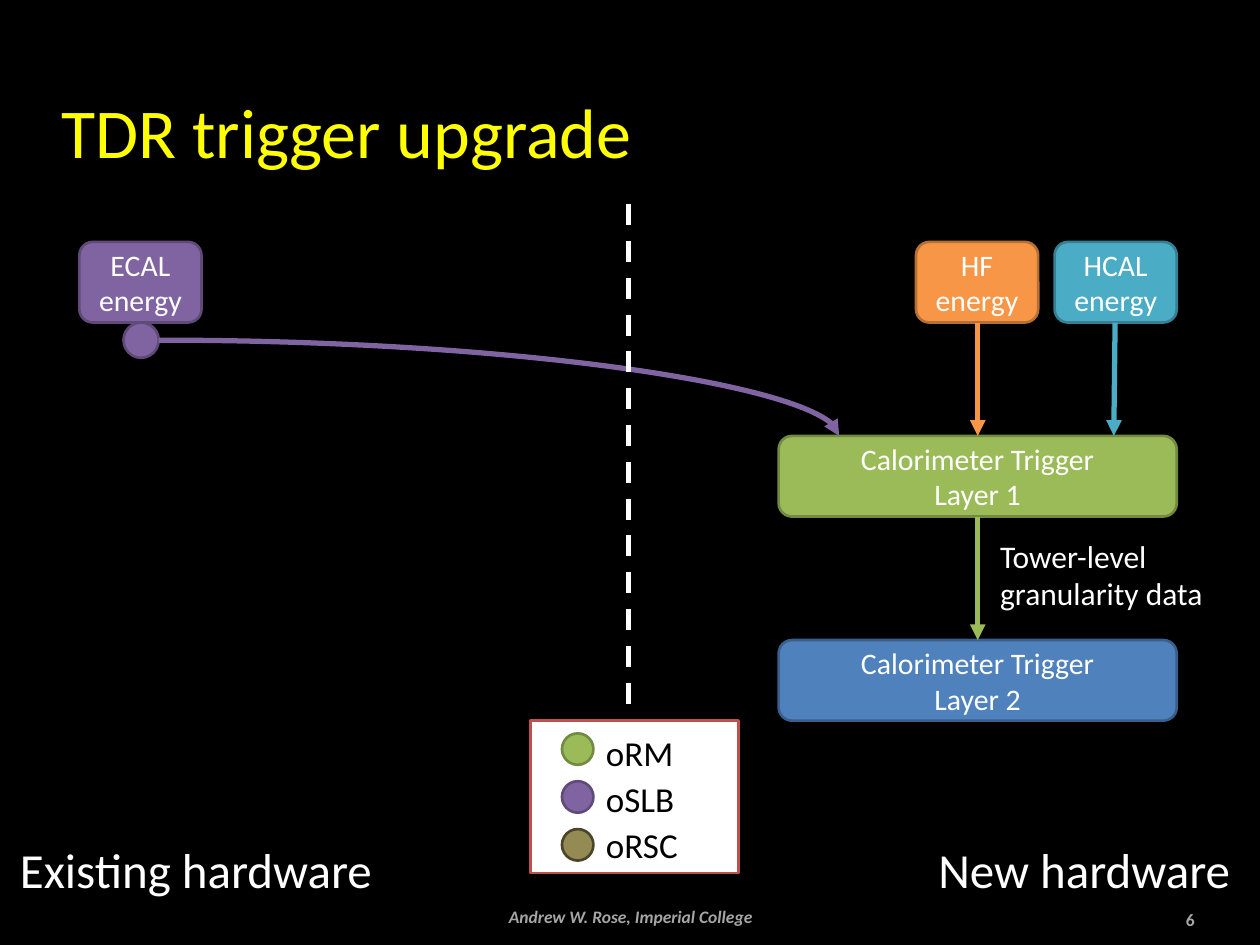
from lxml import etree
from pptx import Presentation
from pptx.dml.color import RGBColor
from pptx.enum.dml import MSO_LINE
from pptx.enum.shapes import MSO_CONNECTOR, MSO_SHAPE
from pptx.enum.text import MSO_ANCHOR, PP_ALIGN
from pptx.oxml.ns import qn
from pptx.util import Inches, Pt

LEFT, CENTER, RIGHT = PP_ALIGN.LEFT, PP_ALIGN.CENTER, PP_ALIGN.RIGHT
TOP, MIDDLE, BOTTOM = MSO_ANCHOR.TOP, MSO_ANCHOR.MIDDLE, MSO_ANCHOR.BOTTOM
ROUNDED, OVAL, RECTANGLE = MSO_SHAPE.ROUNDED_RECTANGLE, MSO_SHAPE.OVAL, MSO_SHAPE.RECTANGLE
STRAIGHT, CURVE = MSO_CONNECTOR.STRAIGHT, MSO_CONNECTOR.CURVE
DASH = MSO_LINE.DASH

COLORS = {
    "black": "000000", "white": "FFFFFF", "yellow": "FFFF00", "grey": "A6A6A6",
    "purple": "8064A2", "purple edge": "5F4A78",
    "orange": "F79646", "orange edge": "B76F34",
    "green": "9BBB59", "green edge": "738A42",
    "blue": "4F81BD", "blue edge": "3A5F8C",
    "teal": "4BACC6", "teal edge": "377F92",
    "olive": "948A54", "olive edge": "4A452A",
    "red": "C0504D",
}

BOX_HEIGHT, ENERGY_WIDTH, LAYER_WIDTH = 0.64, 0.97, 3.16
ENERGY_TOP, LAYER_1_TOP, LAYER_2_TOP = 1.92, 3.46, 5.08
ENERGY_BOTTOM = ENERGY_TOP + BOX_HEIGHT
LAYER_LEFT = 6.18
LAYER_CENTER = LAYER_LEFT + LAYER_WIDTH / 2
PORT_SIZE = 0.28

BOXES = [
    (["ECAL", "energy"], 0.63, ENERGY_TOP, ENERGY_WIDTH, "purple"),
    (["HF", "energy"], 7.27, ENERGY_TOP, ENERGY_WIDTH, "orange"),
    (["HCAL", "energy"], 8.37, ENERGY_TOP, ENERGY_WIDTH, "teal"),
    (["Calorimeter Trigger", "Layer 1"], LAYER_LEFT, LAYER_1_TOP, LAYER_WIDTH, "green"),
    (["Calorimeter Trigger", "Layer 2"], LAYER_LEFT, LAYER_2_TOP, LAYER_WIDTH, "blue"),
]
ARROWS = [
    ((LAYER_CENTER, ENERGY_BOTTOM), (LAYER_CENTER, LAYER_1_TOP), "orange"),
    ((LAYER_CENTER, LAYER_1_TOP + BOX_HEIGHT), (LAYER_CENTER, LAYER_2_TOP), "green"),
    ((8.85, ENERGY_BOTTOM), (8.84, LAYER_1_TOP), "teal"),
]
LEGEND = [("oRM", "green"), ("oSLB", "purple"), ("oRSC", "olive")]
LABELS = [
    ("TDR trigger upgrade", (0.39, 0.25, 8.4, 1.17),
     {"size": 40, "color": "yellow", "anchor": BOTTOM}),
    ("Existing hardware", (0.06, 6.61, 3.25, 0.57), {"size": 28}),
    ("New hardware", (6.61, 6.61, 3.25, 0.57), {"size": 28, "align": RIGHT}),
    ("Tower-level granularity data", (7.84, 4.21, 2.1, 0.71), {"size": 18}),
    ("Andrew W. Rose, Imperial College", (2.77, 7.14, 4.47, 0.27),
     {"size": 10, "color": "grey", "align": CENTER, "anchor": MIDDLE, "bold": True, "italic": True}),
    ("6", (8.62, 7.16, 0.96, 0.27),
     {"size": 10, "color": "grey", "align": RIGHT, "anchor": MIDDLE, "bold": True}),
]


def rgb(name):
    return RGBColor.from_string(COLORS[name])


def write_text(shape, lines, size=17, color="white", align=LEFT, anchor=TOP,
               bold=False, italic=False, spacing=None, indent=0):
    frame = shape.text_frame
    frame.word_wrap = True
    frame.vertical_anchor = anchor
    for index, line in enumerate(lines):
        paragraph = frame.add_paragraph() if index else frame.paragraphs[0]
        paragraph.alignment = align
        paragraph.line_spacing = spacing
        if indent:
            paragraph._p.get_or_add_pPr().set("marL", str(Inches(indent)))
        run = paragraph.add_run()
        run.text = line
        run.font.name = "Calibri"
        run.font.size = Pt(size)
        run.font.bold = bold
        run.font.italic = italic
        run.font.color.rgb = rgb(color)


def add_shape(slide, kind, left, top, width, height, fill, edge):
    shape = slide.shapes.add_shape(kind, Inches(left), Inches(top), Inches(width), Inches(height))
    shape.shadow.inherit = False
    shape.fill.solid()
    shape.fill.fore_color.rgb = rgb(fill)
    shape.line.color.rgb = rgb(edge)
    shape.line.width = Pt(1.5)
    return shape


def add_line(slide, start, end, color, kind=STRAIGHT, arrow=True, dash=None):
    line = slide.shapes.add_connector(kind, *[Inches(value) for value in (*start, *end)])
    line.line.color.rgb = rgb(color)
    line.line.width = Pt(3)
    if dash:
        line.line.dash_style = dash
    properties = line._element.spPr
    if arrow:
        etree.SubElement(properties.find(qn("a:ln")), qn("a:tailEnd"), type="triangle")
    if kind == CURVE:
        properties.find(qn("a:prstGeom")).set("prst", "curvedConnector2")
    etree.SubElement(properties, qn("a:effectLst"))


def add_legend(slide):
    panel = add_shape(slide, RECTANGLE, 4.21, 5.72, 1.65, 1.21, "white", "red")
    write_text(panel, [name for name, _ in LEGEND], size=20, color="black",
               spacing=1.1, indent=0.5)
    for row, (_, color) in enumerate(LEGEND):
        add_shape(slide, OVAL, 4.46, 5.82 + row * 0.38, 0.25, 0.25, color, f"{color} edge")


def main():
    presentation = Presentation()
    presentation.slide_width, presentation.slide_height = Inches(10), Inches(7.5)
    slide = presentation.slides.add_slide(presentation.slide_layouts[6])
    slide.background.fill.solid()
    slide.background.fill.fore_color.rgb = rgb("black")

    for lines, left, top, width, color in BOXES:
        box = add_shape(slide, ROUNDED, left, top, width, BOX_HEIGHT, color, f"{color} edge")
        write_text(box, lines, align=CENTER, anchor=MIDDLE)
    add_shape(slide, OVAL, 0.98, ENERGY_BOTTOM, PORT_SIZE, PORT_SIZE, "purple", "purple edge")

    for start, end, color in ARROWS:
        add_line(slide, start, end, color)
    port_exit = (0.98 + PORT_SIZE, ENERGY_BOTTOM + PORT_SIZE / 2)
    add_line(slide, port_exit, (6.66, LAYER_1_TOP), "purple", kind=CURVE)
    add_line(slide, (4.99, 1.62), (4.99, 5.64), "white", arrow=False, dash=DASH)

    add_legend(slide)
    for text, bounds, style in LABELS:
        label = slide.shapes.add_textbox(*[Inches(value) for value in bounds])
        write_text(label, [text], **style)

    presentation.save("out.pptx")


if __name__ == "__main__":
    main()
